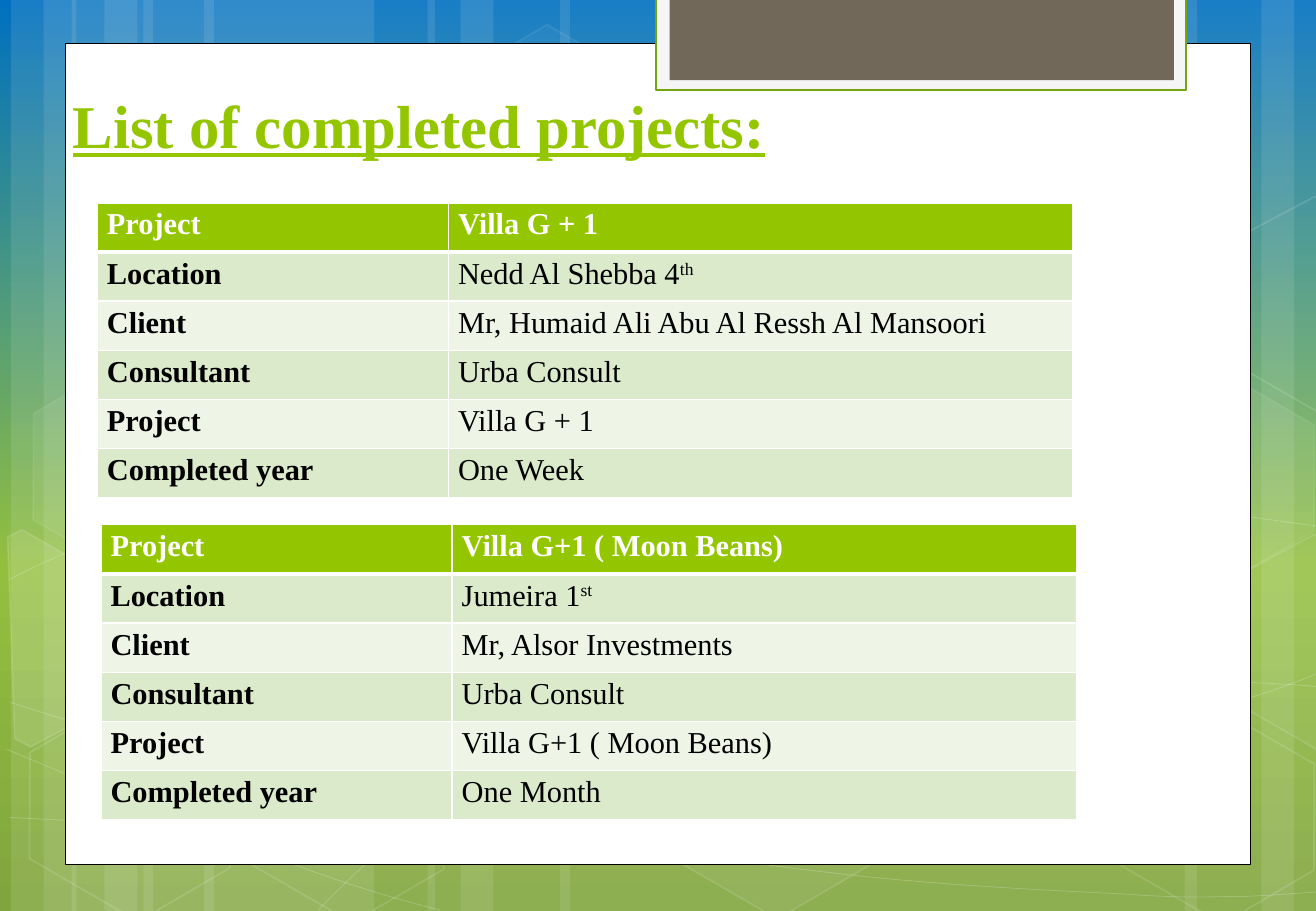
from copy import deepcopy
from dataclasses import dataclass
from math import cos, radians, sin

from lxml import etree
from pptx import Presentation
from pptx.dml.color import RGBColor
from pptx.enum.shapes import MSO_SHAPE
from pptx.enum.text import MSO_ANCHOR
from pptx.oxml.ns import qn
from pptx.shapes.autoshape import Shape
from pptx.slide import Slide
from pptx.table import _Cell
from pptx.text.text import _Paragraph
from pptx.util import Pt

RECTANGLE = MSO_SHAPE.RECTANGLE
HEXAGON = MSO_SHAPE.HEXAGON
BOTTOM = MSO_ANCHOR.BOTTOM
EMU_PER_PX = 9144
TILT = 30
Point = tuple[float, float]


@dataclass(frozen=True)
class Theme:
    font: str = "Times New Roman"
    title_size: int = 36
    table_size: int = 18
    green: str = "94C600"
    white: str = "FFFFFF"
    black: str = "000000"
    bands: tuple[str, str] = ("EEF5E7", "DCEACC")
    tab: str = "71685A"
    tab_frame: str = "F5F5F5"
    tab_line: str = "74A510"
    sky: tuple[tuple[float, str], ...] = ((0, "0070C0"), (0.62, "93BF3F"), (1, "81A53E"))


THEME = Theme()


@dataclass(frozen=True)
class Box:
    left: int
    top: int
    width: int
    height: int

    def emu(self) -> tuple[int, int, int, int]:
        return px(self.left), px(self.top), px(self.width), px(self.height)


@dataclass(frozen=True)
class Paint:
    fill: str | None = None
    fill_alpha: int = 100
    line: str | None = None
    line_width: float = 1
    line_alpha: int = 100


@dataclass(frozen=True)
class Hexagon:
    left: int
    top: int
    fill_alpha: int
    line_alpha: int


@dataclass(frozen=True)
class Shard:
    center: Point
    points: tuple[Point, ...]
    fill_alpha: int


@dataclass(frozen=True)
class Project:
    box: Box
    name: str
    location: str
    client: str
    consultant: str
    duration: str

    def rows(self) -> list[tuple[str, str]]:
        return [("Project", self.name), ("Location", self.location), ("Client", self.client),
                ("Consultant", self.consultant), ("Project", self.name),
                ("Completed year", self.duration)]


STRIPES = ((118, 190), (9, 54), (36, 90), (168, 190), (59, 54), (86, 90),
           (795, 190), (1038, 54), (975, 90), (461, 334), (352, 54), (379, 90))
CURVES = (
    ((8, 673), (66, 676), (125, 679), (206, 678), (288, 677), (387, 675), (496, 665),
     (605, 655), (758, 636), (858, 617), (957, 598), (1058, 568), (1091, 551)),
    ((8, 477), (39, 461), (70, 446), (132, 431), (193, 416), (280, 394), (376, 387),
     (473, 380), (589, 379), (708, 387), (828, 395), (1026, 426), (1091, 434)),
    ((6, 617), (137, 672), (268, 727), (362, 749)),
    ((8, 578), (42, 589), (76, 600), (139, 616), (202, 631), (296, 656), (386, 673),
     (477, 690), (591, 708), (680, 718), (770, 729), (866, 733), (924, 736),
     (981, 740), (996, 738), (1024, 738), (1051, 737), (1071, 735), (1091, 734)),
    ((262, 749), (282, 729), (301, 709), (327, 691), (353, 673), (390, 653), (420, 639),
     (450, 625), (469, 619), (509, 609), (549, 599), (621, 585), (659, 578),
     (697, 571), (703, 571), (737, 569), (770, 566), (823, 563), (860, 562),
     (898, 561), (960, 562), (960, 562), (984, 562), (1008, 562), (1032, 562),
     (1052, 563), (1070, 564), (1080, 565), (1089, 566), (1086, 565), (1090, 566)),
)
HEXAGONS = (Hexagon(362, 36, 4, 8), Hexagon(538, 589, 6, 12), Hexagon(12, 591, 0, 12),
            Hexagon(15, 312, 7, 8), Hexagon(188, 592, 0, 12), Hexagon(904, 593, 0, 12),
            Hexagon(904, 314, 7, 8))
SHARDS = (
    Shard((38.5, 535),
          ((6, 442), (18, 436), (101, 484), (103, 573), (25, 615), (12, 608)), 10),
    Shard((1066.5, 520),
          ((1003, 483), (1082, 440), (1090, 445), (1096, 616), (1089, 620), (1006, 572)), 4),
    Shard((1066.5, 241),
          ((1003, 204), (1082, 162), (1091, 167), (1096, 338), (1089, 342), (1006, 294)), 0),
)
PANELS = (
    (Box(54, 36, 975, 676), Paint(THEME.white, line=THEME.black, line_width=0.5)),
    (Box(540, -2, 436, 76), Paint(THEME.tab_frame, line=THEME.tab_line, line_width=1.25)),
    (Box(551, -2, 415, 68), Paint(THEME.tab)),
)
TITLE_BOX = Box(50, 58, 832, 79)
COLUMNS = (289, 514)
PROJECTS = (
    Project(Box(80, 167, 803, 243), "Villa G + 1", "Nedd Al Shebba 4^th",
            "Mr, Humaid Ali Abu Al Ressh Al Mansoori", "Urba Consult", "One Week"),
    Project(Box(83, 432, 803, 243), "Villa G+1 ( Moon Beans)", "Jumeira 1^st",
            "Mr, Alsor Investments", "Urba Consult", "One Month"),
)


def px(length: float) -> int:
    return round(length * EMU_PER_PX)


def set_alpha(parent: etree._Element, percent: int) -> None:
    if percent < 100:
        color = parent.find(qn("a:solidFill")).find(qn("a:srgbClr"))
        etree.SubElement(color, qn("a:alpha"), val=str(percent * 1000))


def apply_paint(shape: Shape, paint: Paint) -> None:
    shape.shadow.inherit = False
    properties = shape.element.spPr
    if paint.fill and paint.fill_alpha:
        shape.fill.solid()
        shape.fill.fore_color.rgb = RGBColor.from_string(paint.fill)
        set_alpha(properties, paint.fill_alpha)
    else:
        shape.fill.background()
    if paint.line:
        shape.line.color.rgb = RGBColor.from_string(paint.line)
        shape.line.width = Pt(paint.line_width)
        set_alpha(properties.find(qn("a:ln")), paint.line_alpha)
    else:
        shape.line.fill.background()


def draw_rectangle(slide: Slide, box: Box, paint: Paint) -> None:
    apply_paint(slide.shapes.add_shape(RECTANGLE, *box.emu()), paint)


def draw_hexagon(slide: Slide, hexagon: Hexagon) -> None:
    shape = slide.shapes.add_shape(HEXAGON, *Box(hexagon.left, hexagon.top, 190, 152).emu())
    shape.adjustments[0] = 0.285
    shape.rotation = TILT
    apply_paint(shape, Paint(THEME.white, hexagon.fill_alpha, THEME.white, 1, hexagon.line_alpha))


def add_outline(slide: Slide, points: tuple[Point, ...], closed: bool) -> Shape:
    vertices = [(px(x), px(y)) for x, y in points]
    builder = slide.shapes.build_freeform(*vertices[0])
    builder.add_line_segments(vertices[1:], close=closed)
    return builder.convert_to_shape()


def draw_curve(slide: Slide, controls: tuple[Point, ...]) -> None:
    shape = add_outline(slide, controls, False)
    segments = list(shape.element.iter(qn("a:lnTo")))
    for start in range(0, len(segments), 3):
        curve = etree.Element(qn("a:cubicBezTo"))
        segments[start].addprevious(curve)
        for segment in segments[start:start + 3]:
            curve.append(segment[0])
            segment.getparent().remove(segment)
    apply_paint(shape, Paint(line=THEME.white, line_width=0.5, line_alpha=20))


def draw_shard(slide: Slide, shard: Shard) -> None:
    center_x, center_y = shard.center
    cosine, sine = cos(radians(TILT)), sin(radians(TILT))
    upright = tuple((center_x + (x - center_x) * cosine + (y - center_y) * sine,
                     center_y - (x - center_x) * sine + (y - center_y) * cosine)
                    for x, y in shard.points)
    shape = add_outline(slide, upright, True)
    shape.rotation = TILT
    apply_paint(shape, Paint(THEME.white, shard.fill_alpha, THEME.white, 1, 12))


def draw_background(slide: Slide) -> None:
    fill = slide.background.fill
    fill.gradient()
    fill.gradient_angle = 270
    stops = next(slide.element.iter(qn("a:gsLst")))
    stops.append(deepcopy(stops[0]))
    for stop, (position, color) in zip(fill.gradient_stops, THEME.sky):
        stop.position = position
        stop.color.rgb = RGBColor.from_string(color)


def set_font(paragraph: _Paragraph, size: int, color: str, bold: bool) -> None:
    font = paragraph.font
    font.name, font.size, font.bold = THEME.font, Pt(size), bold
    font.color.rgb = RGBColor.from_string(color)


def draw_title(slide: Slide) -> None:
    frame = slide.shapes.add_textbox(*TITLE_BOX.emu()).text_frame
    frame.word_wrap = True
    frame.vertical_anchor = BOTTOM
    paragraph = frame.paragraphs[0]
    paragraph.text = "List of completed projects:"
    set_font(paragraph, THEME.title_size, THEME.green, True)
    paragraph.font.underline = True


def add_borders(cell: _Cell, row: int) -> None:
    properties = cell._tc.get_or_add_tcPr()
    widths = {"L": 1, "R": 1, "T": 3 if row == 1 else 1, "B": 3 if row == 0 else 1}
    for side, width in widths.items():
        line = etree.SubElement(properties, qn(f"a:ln{side}"), w=str(Pt(width)))
        fill = etree.SubElement(line, qn("a:solidFill"))
        etree.SubElement(fill, qn("a:srgbClr"), val=THEME.white)


def fill_cell(cell: _Cell, text: str, row: int, column: int) -> None:
    add_borders(cell, row)
    cell.fill.solid()
    cell.fill.fore_color.rgb = RGBColor.from_string(THEME.bands[row % 2] if row else THEME.green)
    cell.margin_left = cell.margin_right = px(8)
    cell.margin_top = cell.margin_bottom = 0
    paragraph = cell.text_frame.paragraphs[0]
    paragraph.line_spacing = 1.15
    base, _, ordinal = text.partition("^")
    paragraph.add_run().text = base
    if ordinal:
        run = paragraph.add_run()
        run.text = ordinal
        run._r.get_or_add_rPr().set("baseline", "30000")
    set_font(paragraph, THEME.table_size, THEME.black if row else THEME.white,
             row == 0 or column == 0)


def draw_project(slide: Slide, project: Project) -> None:
    rows = project.rows()
    table = slide.shapes.add_table(len(rows), len(COLUMNS), *project.box.emu()).table
    table.horz_banding = False
    for column, width in zip(table.columns, COLUMNS):
        column.width = px(width)
    for row, texts in enumerate(rows):
        for column, text in enumerate(texts):
            fill_cell(table.cell(row, column), text, row, column)


def main() -> None:
    presentation = Presentation()
    presentation.slide_width, presentation.slide_height = px(1083), px(750)
    slide = presentation.slides.add_slide(presentation.slide_layouts[6])
    draw_background(slide)
    for left, width in STRIPES:
        draw_rectangle(slide, Box(left, 0, width, 750), Paint(THEME.white, 10))
    for controls in CURVES:
        draw_curve(slide, controls)
    for hexagon in HEXAGONS:
        draw_hexagon(slide, hexagon)
    for shard in SHARDS:
        draw_shard(slide, shard)
    for box, paint in PANELS:
        draw_rectangle(slide, box, paint)
    draw_title(slide)
    for project in PROJECTS:
        draw_project(slide, project)
    presentation.save("out.pptx")


if __name__ == "__main__":
    main()
